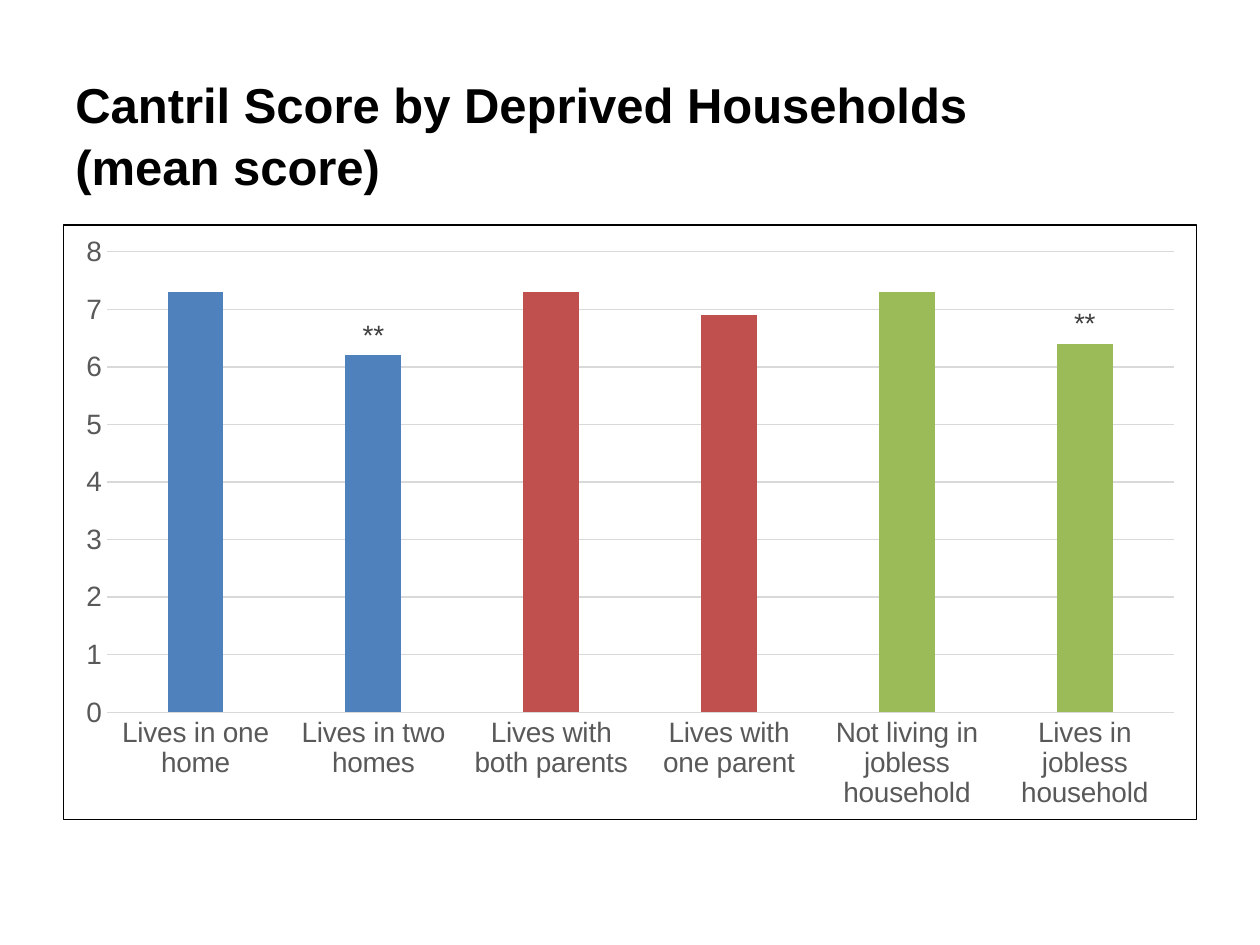
from dataclasses import dataclass

from lxml import etree
from pptx import Presentation
from pptx.chart.data import CategoryChartData
from pptx.dml.color import RGBColor
from pptx.enum.chart import XL_CHART_TYPE as ChartType
from pptx.enum.chart import XL_LABEL_POSITION as LabelPosition
from pptx.enum.chart import XL_TICK_MARK as TickMark
from pptx.enum.text import MSO_ANCHOR as Anchor
from pptx.enum.text import PP_ALIGN as Align
from pptx.oxml import parse_xml
from pptx.oxml.ns import qn
from pptx.util import Inches, Pt


@dataclass(frozen=True)
class Theme:
    font: str = "Arial"
    title_size: int = 28
    chart_size: int = 16
    ink: str = "000000"
    axis_text: str = "595959"
    label_text: str = "404040"
    grid: str = "D9D9D9"
    group_fills: tuple = ("4F81BD", "C0504D", "9BBB59")
    line_width: float = 0.75


theme = Theme()


def style_font(font, size, color):
    font.name = theme.font
    font.size = Pt(size)
    font.color.rgb = RGBColor.from_string(color)


def style_line(line, color):
    line.color.rgb = RGBColor.from_string(color)
    line.width = Pt(theme.line_width)


deck = Presentation()
deck.slide_width, deck.slide_height = Inches(10), Inches(7.5)
slide = deck.slides.add_slide(deck.slide_layouts[6])

# Title
title = slide.shapes.add_textbox(Inches(0.5), Inches(0.52), Inches(9), Inches(0.87)).text_frame
title.word_wrap = True
title.vertical_anchor = Anchor.TOP
title.text = "Cantril Score by Deprived Households\v(mean score)"
heading = title.paragraphs[0]
heading.alignment = Align.LEFT
heading.line_spacing = 1.05
for run in heading.runs:
    style_font(run.font, theme.title_size, theme.ink)
    run.font.bold = True

# Mean scores: two households per group, starred where significant
scores = [
    ("Lives in one home", 7.3, ""),
    ("Lives in two homes", 6.2, "**"),
    ("Lives with both parents", 7.3, ""),
    ("Lives with one parent", 6.9, ""),
    ("Not living in jobless household", 7.3, ""),
    ("Lives in jobless household", 6.4, "**"),
]
score_data = CategoryChartData()
score_data.categories = [household for household, _, _ in scores]
score_data.add_series("Series 1", [score for _, score, _ in scores])
chart = slide.shapes.add_chart(
    ChartType.COLUMN_CLUSTERED,
    Inches(0.5), Inches(1.78), Inches(9), Inches(4.73), score_data,
).chart
chart.has_legend = False
chart.has_title = False
style_font(chart.font, theme.chart_size, theme.ink)

# Columns and significance marks
plot = chart.plots[0]
plot.gap_width = 219
plot.overlap = -27
plot.vary_by_categories = False
columns = plot.series[0]
columns.format.fill.solid()
columns.format.fill.fore_color.rgb = RGBColor.from_string(theme.group_fills[0])
for index, (_, _, mark) in enumerate(scores):
    column = columns.points[index]
    column.format.fill.solid()
    column.format.fill.fore_color.rgb = RGBColor.from_string(theme.group_fills[index // 2])
    if mark:
        column.data_label.text_frame.text = mark
        mark_run = column.data_label.text_frame.paragraphs[0].runs[0]
        style_font(mark_run.font, theme.chart_size, theme.label_text)
        column.data_label.position = LabelPosition.OUTSIDE_END

# Axes
households, score_axis = chart.category_axis, chart.value_axis
for axis in (households, score_axis):
    axis.major_tick_mark = TickMark.NONE
    axis.minor_tick_mark = TickMark.NONE
    style_font(axis.tick_labels.font, theme.chart_size, theme.axis_text)
style_line(households.format.line, theme.grid)
score_axis.format.line.fill.background()
score_axis.minimum_scale = 0
score_axis.maximum_scale = 8
score_axis.major_unit = 1
score_axis.tick_labels.number_format = "#,##0"
score_axis.tick_labels.number_format_is_linked = False
score_axis.has_major_gridlines = True
style_line(score_axis.major_gridlines.format.line, theme.grid)

# Chart border
border = parse_xml(
    '<c:spPr xmlns:c="http://schemas.openxmlformats.org/drawingml/2006/chart"'
    ' xmlns:a="http://schemas.openxmlformats.org/drawingml/2006/main"><a:noFill/>'
    f'<a:ln w="{Pt(theme.line_width)}"><a:solidFill><a:srgbClr val="{theme.ink}"/>'
    "</a:solidFill></a:ln></c:spPr>"
)
chart.element.find(qn("c:txPr")).addprevious(border)

deck.save("out.pptx")
